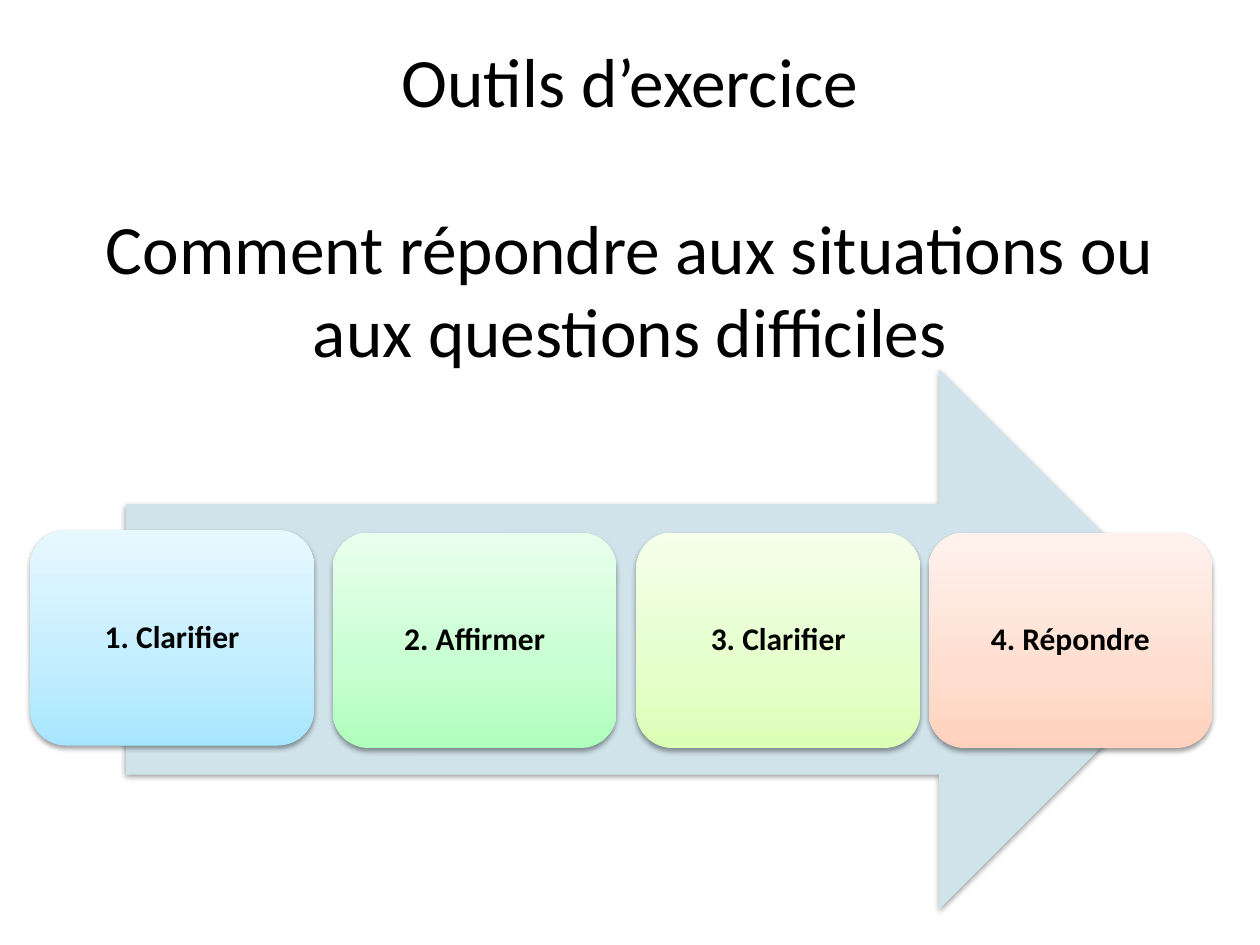
from copy import deepcopy
from dataclasses import dataclass

from lxml import etree
from pptx import Presentation, util as u
from pptx.dml.color import RGBColor
from pptx.enum import shapes, text
from pptx.oxml.ns import qn


@dataclass(frozen=True)
class Theme:
    font: str = "Calibri"
    ink: str = "000000"
    arrow: str = "D0E3EA"
    title: float = 39.6
    label: float = 18
    gap: float = 48.3


@dataclass(frozen=True)
class Box:
    x: float
    y: float
    w: float
    h: float

    def place(self):
        return [u.Cm(v) for v in (self.x, self.y, self.w, self.h)]


THEME = Theme()
STEPS = [
    ("1. Clarifier", 0, 0, ("A7E6FF", "C1EDFF", "E7F8FF")),
    ("2. Affirmer", 6.1, 0.05, ("AFFFBD", "C6FFD0", "E9FFED")),
    ("3. Clarifier", 12.22, 0.05, ("DBFFB6", "E5FFCB", "F5FFEB")),
    ("4. Répondre", 18.11, 0.05, ("FFD2BD", "FFDED0", "FFF2ED")),
]


def color(code):
    return RGBColor.from_string(code)


def style(par, size, bold=False):
    par.alignment = text.PP_ALIGN.CENTER
    par.font.name = THEME.font
    par.font.size = u.Pt(size)
    par.font.bold = bold
    par.font.color.rgb = color(THEME.ink)


def frame(shape, inset):
    body = shape.text_frame
    body.word_wrap = True
    body.vertical_anchor = text.MSO_ANCHOR.MIDDLE
    body.margin_left = body.margin_right = u.Cm(inset)
    body.margin_top = body.margin_bottom = u.Cm(min(inset, 0.18))
    return body


def shade(shape):
    shape.shadow.inherit = False
    list_ = shape._element.spPr.find(qn("a:effectLst"))
    drop = etree.SubElement(
        list_, qn("a:outerShdw"), blurRad=str(u.Pt(3.1)),
        dist=str(u.Pt(1.6)), dir="5400000", rotWithShape="0")
    tint = etree.SubElement(drop, qn("a:srgbClr"), val=THEME.ink)
    etree.SubElement(tint, qn("a:alpha"), val="38000")


def blend(shape, codes):
    fill = shape.fill
    fill.gradient()
    fill.gradient_angle = 90
    stops = shape._element.spPr.find(qn("a:gradFill")).find(qn("a:gsLst"))
    stops.append(deepcopy(stops[-1]))
    for stop, code, pos in zip(fill.gradient_stops, codes, (0, 0.35, 1)):
        stop.color.rgb = color(code)
        stop.position = pos


def heading(slide, box):
    body = frame(slide.shapes.add_textbox(*box.place()), 0.25)
    first, second = body.paragraphs[0], body.add_paragraph()
    first.text = "Outils d’exercice"
    second.text = "Comment répondre aux situations ou aux questions difficiles"
    for par in (first, second):
        style(par, THEME.title)
    second.space_before = u.Pt(THEME.gap)


def card(group, box, label, codes):
    shape = group.shapes.add_shape(
        shapes.MSO_SHAPE.ROUNDED_RECTANGLE, *box.place())
    blend(shape, codes)
    shape.line.fill.background()
    shade(shape)
    par = frame(shape, 0.18).paragraphs[0]
    par.text = label
    par.line_spacing = 0.9
    style(par, THEME.label, True)


def process(slide, box):
    group = slide.shapes.add_group_shape()
    arrow = group.shapes.add_shape(
        shapes.MSO_SHAPE.RIGHT_ARROW,
        *Box(box.x + 1.93, box.y, 21.84, box.h).place())
    arrow.fill.solid()
    arrow.fill.fore_color.rgb = color(THEME.arrow)
    arrow.line.fill.background()
    shade(arrow)
    for label, dx, dy, codes in STEPS:
        spot = Box(box.x + dx, box.y + 3.25 + dy, 5.72, 4.34)
        card(group, spot, label, codes)


def main():
    deck = Presentation()
    deck.slide_width, deck.slide_height = u.Cm(25.4), u.Cm(19.05)
    slide = deck.slides.add_slide(deck.slide_layouts[6])
    heading(slide, Box(1.27, 2.54, 22.86, 3.18))
    process(slide, Box(0.61, 7.44, 23.83, 10.9))
    deck.save("out.pptx")


if __name__ == "__main__":
    main()
